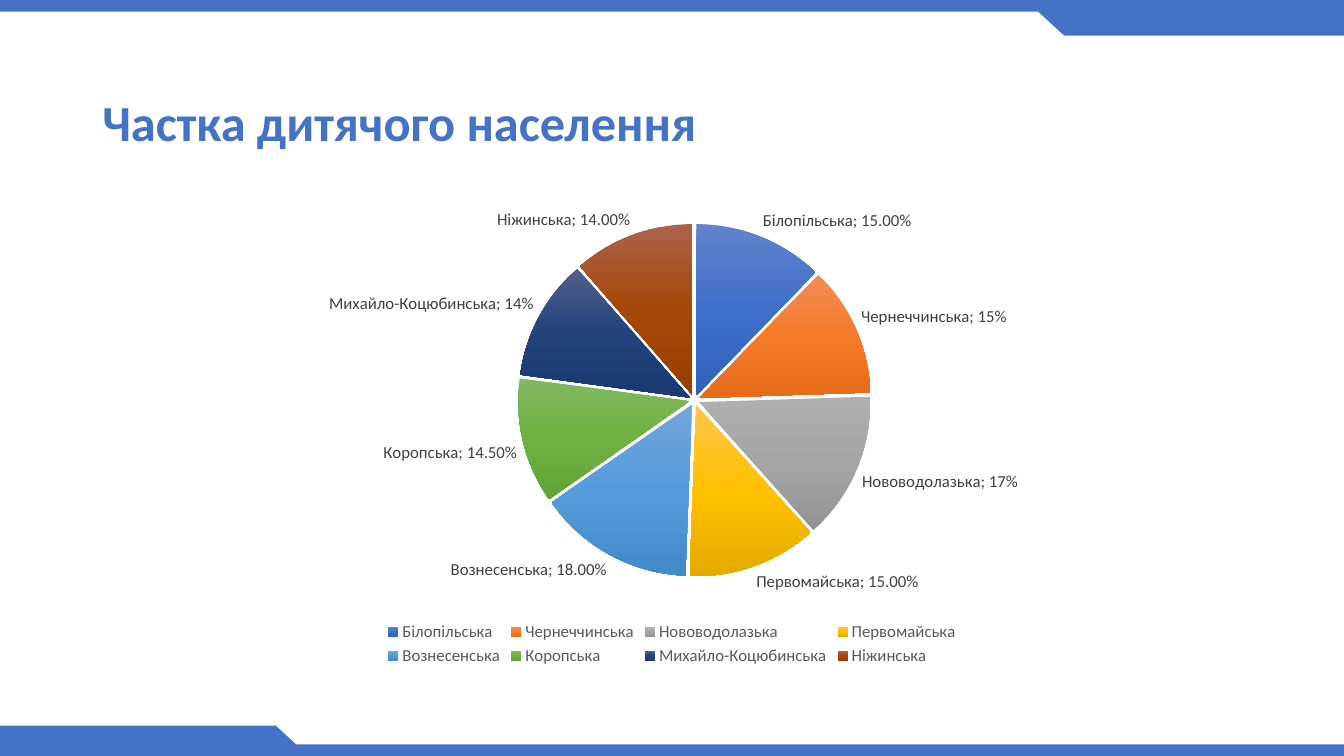
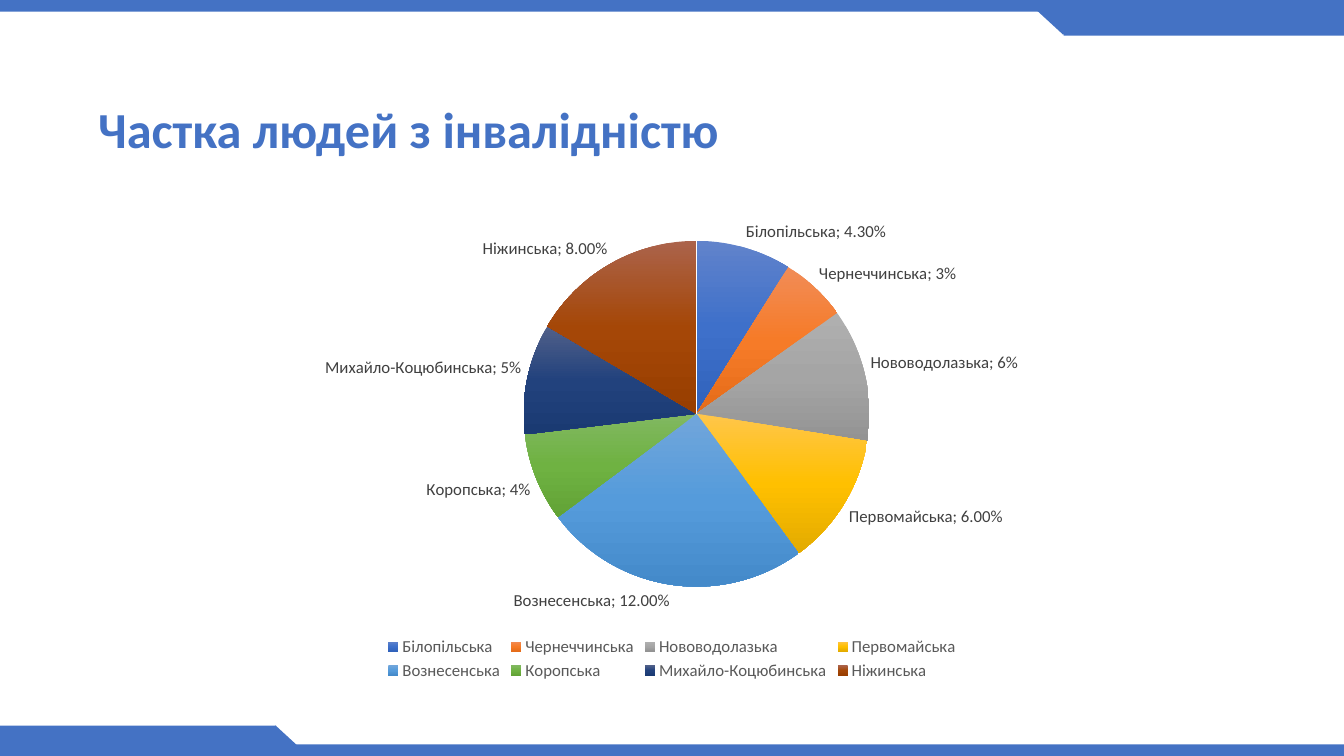
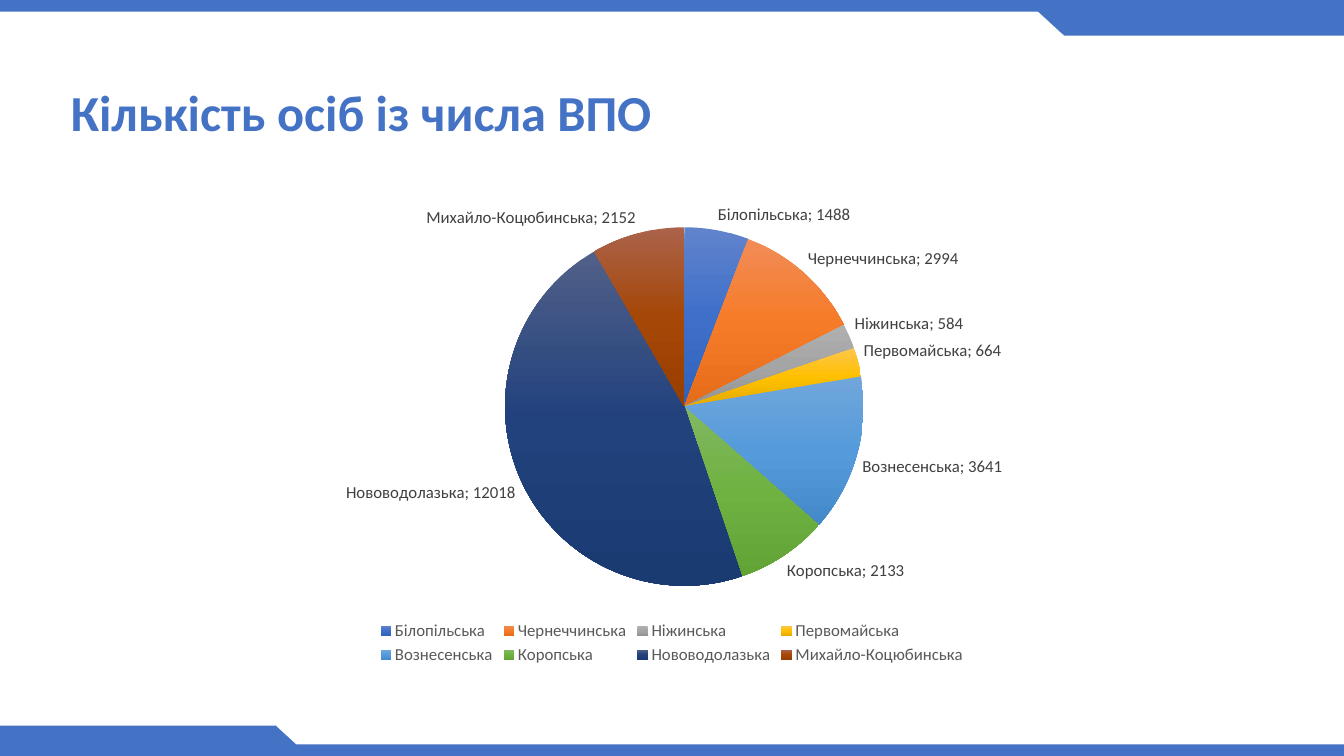
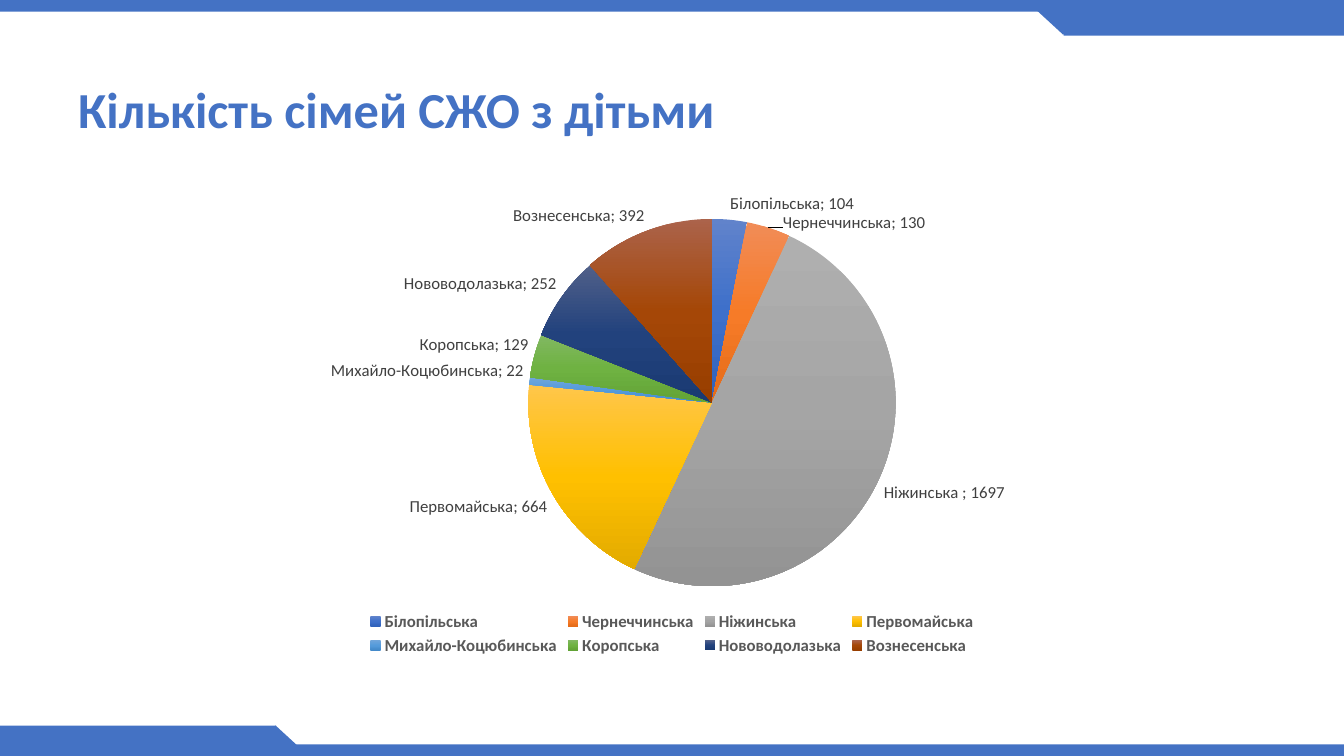
from lxml import etree
from pptx import Presentation
from pptx import util as u
from pptx.chart import data as chart_data
from pptx.dml.color import RGBColor
from pptx.enum import chart as charts, shapes, text
from pptx.oxml import ns

PX = 9525  # EMU in one px; the slide is 1280 x 720 px
FONT = "Calibri"
BLUE = RGBColor(0x44, 0x72, 0xC4)
BLACK = RGBColor(0x00, 0x00, 0x00)
LEGEND_GREY = RGBColor(0x59, 0x59, 0x59)
LABEL_GREY = RGBColor(0x40, 0x40, 0x40)

# Slice gradients, from top to bottom
SLICE_GRADIENTS = [
    [RGBColor.from_string(stop) for stop in stops.split()]
    for stops in (
        "6183CB 3E70CA 3062BB",
        "F18C57 F67B28 E56C19",
        "AFAFAF A5A5A5 939393",
        "FFC64B FFC000 E3AB00",
        "71A6DB 559BDB 448ACA",
        "81B861 6FB242 62A336",
        "516089 22427D 1A3A72",
        "AB634B A54707 983E00",
    )
]

TITLE_FONT = {"name": FONT, "size": u.Pt(36), "bold": True, "color": BLUE}
CHART_FONT = {"name": FONT, "size": u.Pt(10), "color": BLACK}
LEGEND_FONT = {"name": FONT, "size": u.Pt(12), "bold": False, "color": LEGEND_GREY}
LABEL_FONT = {"name": FONT, "size": u.Pt(12), "bold": False, "color": LABEL_GREY}

# Blue bands at the top and bottom: preset, left, top, width, height, rotation
RECTANGLE = shapes.MSO_SHAPE.RECTANGLE
TRIANGLE = shapes.MSO_SHAPE.FLOWCHART_MERGE
BANDS = [
    (RECTANGLE, 0, 0, 1280, 11, 0),
    (RECTANGLE, 0, 709, 1280, 11, 0),
    (RECTANGLE, 1013, 5, 267, 29, 0),
    (TRIANGLE, 981, 4, 63, 29, 0),
    (RECTANGLE, 0, 691, 263, 29, 0),
    (TRIANGLE, 231, 691, 63, 29, 180),
]
CHART_WIDTH, CHART_HEIGHT = 1104, 457

COMMUNITIES = ["Білопільська", "Чернеччинська", "Нововодолазька", "Первомайська",
               "Вознесенська", "Коропська", "Михайло-Коцюбинська", "Ніжинська"]

# "whole" lists the slices whose label is a whole percentage;
# "shifts" moves a slice's label by (x, y) px
SLIDES = [
    {
        "title": "Частка дитячого населення", "title_at": (88, 50), "chart_top": 181,
        "categories": COMMUNITIES,
        "values": [0.15, 0.15, 0.17, 0.15, 0.18, 0.145, 0.14, 0.14],
        "format": "0.00%", "whole": [1, 2, 6], "explosion": 3,
    },
    {
        "title": "Частка людей з інвалідністю", "title_at": (84, 56), "chart_top": 195,
        "categories": COMMUNITIES,
        "values": [0.043, 0.03, 0.06, 0.06, 0.12, 0.04, 0.05, 0.08],
        "format": "0.00%", "whole": [1, 2, 5, 6],
    },
    {
        "title": "Кількість осіб із числа ВПО", "title_at": (58, 40), "chart_top": 180,
        "categories": ["Білопільська", "Чернеччинська", "Ніжинська", "Первомайська",
                       "Вознесенська", "Коропська", "Нововодолазька",
                       "Михайло-Коцюбинська"],
        "values": [1488, 2994, 584, 664, 3641, 2133, 12018, 2152],
    },
    {
        "title": "Кількість сімей СЖО з дітьми", "title_at": (65, 37), "chart_top": 171,
        "categories": ["Білопільська", "Чернеччинська", "Ніжинська ", "Первомайська",
                       "Михайло-Коцюбинська", "Коропська", "Нововодолазька",
                       "Вознесенська"],
        "values": [104, 130, 1697, 664, 22, 129, 252, 392],
        "legend_bold": True, "shifts": {1: (12, 10)},
    },
]


def set_font(font, values):
    for name, value in values.items():
        if name == "color":
            font.color.rgb = value
        else:
            setattr(font, name, value)


def fill_slice(point, colors):
    properties = point.format._element.get_or_add_spPr()
    gradient = etree.SubElement(properties, ns.qn("a:gradFill"))
    stops = etree.SubElement(gradient, ns.qn("a:gsLst"))
    for position, color in zip((0, 50000, 100000), colors):
        stop = etree.SubElement(stops, ns.qn("a:gs"), pos=str(position))
        etree.SubElement(stop, ns.qn("a:srgbClr"), val=str(color))
    etree.SubElement(gradient, ns.qn("a:lin"), ang="5400000", scaled="0")
    point.format.line.fill.background()


presentation = Presentation()
presentation.slide_width = 1280 * PX
presentation.slide_height = 720 * PX

for content in SLIDES:
    slide = presentation.slides.add_slide(presentation.slide_layouts[6])

    # Bands
    for preset, left, top, width, height, rotation in BANDS:
        band = slide.shapes.add_shape(preset, left * PX, top * PX, width * PX, height * PX)
        band.rotation = rotation
        band.shadow.inherit = False
        band.fill.solid()
        band.fill.fore_color.rgb = BLUE
        band.line.fill.background()

    # Title
    left, top = content["title_at"]
    title = slide.shapes.add_textbox(left * PX, top * PX, 1104 * PX, 139 * PX)
    title.text_frame.word_wrap = True
    title.text_frame.vertical_anchor = text.MSO_ANCHOR.MIDDLE
    paragraph = title.text_frame.paragraphs[0]
    paragraph.text = content["title"]
    paragraph.line_spacing = 0.9
    set_font(paragraph.font, TITLE_FONT)

    # Pie chart
    number_format = content.get("format", "General")
    pie_data = chart_data.CategoryChartData(number_format=number_format)
    pie_data.categories = content["categories"]
    pie_data.add_series("Series 1", content["values"])
    chart = slide.shapes.add_chart(
        charts.XL_CHART_TYPE.PIE, 88 * PX, content["chart_top"] * PX,
        CHART_WIDTH * PX, CHART_HEIGHT * PX, pie_data).chart
    chart.has_title = False
    set_font(chart.font, CHART_FONT)
    plot = chart.plots[0]
    plot.vary_by_categories = True
    series = plot.series[0]

    # Legend
    chart.has_legend = True
    chart.legend.position = charts.XL_LEGEND_POSITION.BOTTOM
    chart.legend.include_in_layout = False
    set_font(chart.legend.font,
             {**LEGEND_FONT, "bold": content.get("legend_bold", False)})

    # Slices
    if "explosion" in content:
        explosion = etree.Element(ns.qn("c:explosion"), val=str(content["explosion"]))
        series._element.find(ns.qn("c:tx")).addnext(explosion)
    for index, colors in enumerate(SLICE_GRADIENTS):
        fill_slice(series.points[index], colors)

    # Labels
    labels = series.data_labels
    label_settings = {
        "show_value": True, "show_category_name": True, "show_percentage": False,
        "number_format": number_format, "number_format_is_linked": False,
        "position": charts.XL_LABEL_POSITION.OUTSIDE_END,
    }
    for name, value in label_settings.items():
        setattr(labels, name, value)
    set_font(labels.font, LABEL_FONT)
    for index in content.get("whole", []):
        label = series.points[index].data_label
        paragraph = label.text_frame.paragraphs[0]
        run = paragraph.add_run()
        run.text = f"{content['categories'][index]}; {content['values'][index]:.0%}"
        set_font(run.font, LABEL_FONT)
        label.position = charts.XL_LABEL_POSITION.OUTSIDE_END

    # Labels moved clear of their neighbours
    for index, (shift_x, shift_y) in content.get("shifts", {}).items():
        label = series.points[index].data_label
        set_font(label.font, LABEL_FONT)
        label.position = charts.XL_LABEL_POSITION.OUTSIDE_END
        element = label._dLbl
        element.find(ns.qn("c:showCatName")).set("val", "1")
        layout = etree.Element(ns.qn("c:layout"))
        element.find(ns.qn("c:idx")).addnext(layout)
        manual = etree.SubElement(layout, ns.qn("c:manualLayout"))
        for axis, share in (("x", shift_x / CHART_WIDTH), ("y", shift_y / CHART_HEIGHT)):
            etree.SubElement(manual, ns.qn(f"c:{axis}"), val=f"{share:.4f}")

presentation.save("out.pptx")
